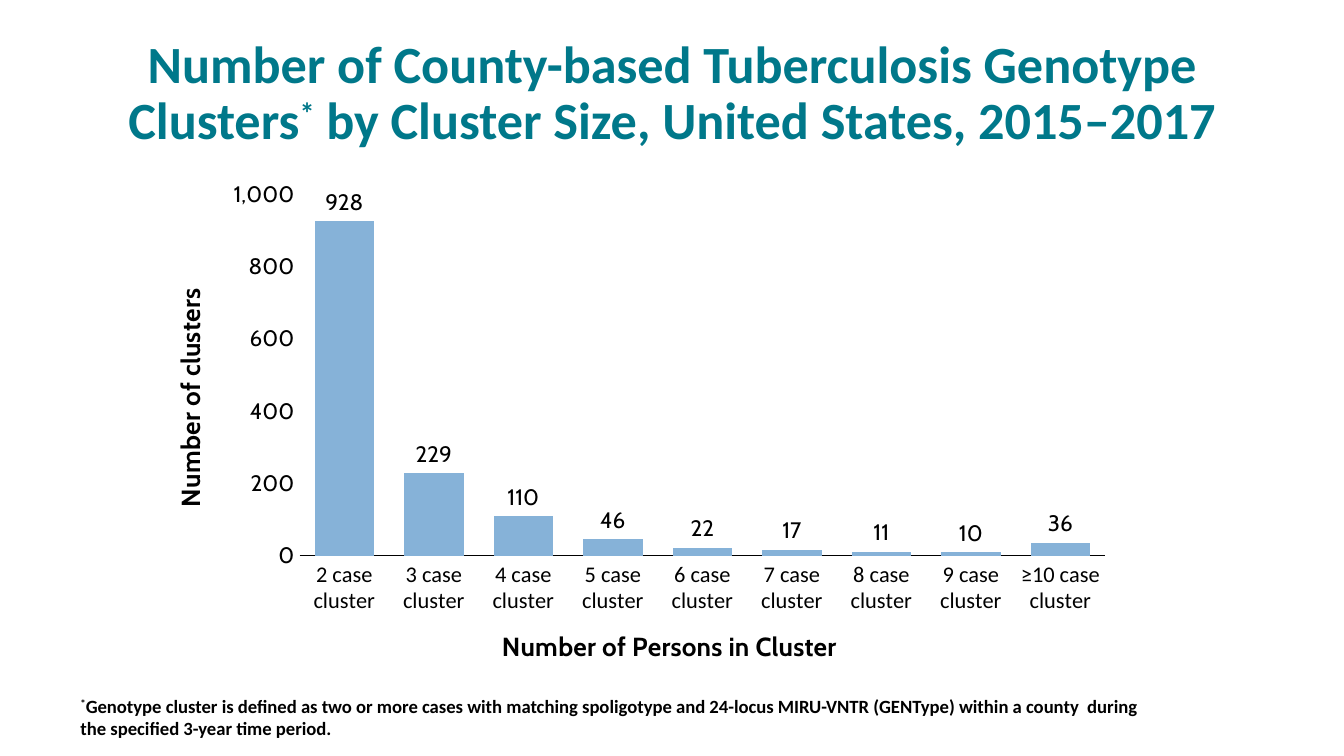
from lxml import etree
from pptx import Presentation
from pptx.chart.data import CategoryChartData
from pptx.dml.color import RGBColor
from pptx.enum.chart import XL_CHART_TYPE, XL_LABEL_POSITION, XL_TICK_MARK
from pptx.enum.text import MSO_ANCHOR, MSO_AUTO_SIZE, PP_ALIGN
from pptx.oxml.ns import qn
from pptx.util import Inches, Pt

COLUMNS = XL_CHART_TYPE.COLUMN_CLUSTERED
OUTSIDE_END = XL_LABEL_POSITION.OUTSIDE_END
NO_TICK = XL_TICK_MARK.NONE
TITLE_ONLY = 5

COLORS = {"title": "00788A", "text": "000000", "bar": "86B2D8"}
BODY_FONT, CHART_FONT = "Calibri", "Cabin"

CLUSTERS = {
    "2 case cluster": 928,
    "3 case cluster": 229,
    "4 case cluster": 110,
    "5 case cluster": 46,
    "6 case cluster": 22,
    "7 case cluster": 17,
    "8 case cluster": 11,
    "9 case cluster": 10,
    "≥10 case cluster": 36,
}


def format_font(font, size=12, name=BODY_FONT, color="text", bold=False):
    font.size = Pt(size)
    font.name = name
    font.bold = bold
    font.color.rgb = RGBColor.from_string(COLORS[color])


def add_span(para, text, raised=False, **style):
    span = para.add_run()
    span.text = text
    format_font(span.font, **style)
    if raised:
        span._r.get_or_add_rPr().set("baseline", "30000")


def set_layout(parent, index, inner=False, **percents):
    """Place a chart part at percentages (x, y, w, h) of the chart's size."""
    for old in parent.findall(qn("c:layout")):
        parent.remove(old)
    layout = etree.Element(qn("c:layout"))
    manual = etree.SubElement(layout, qn("c:manualLayout"))
    settings = [("layoutTarget", "inner")] if inner else []
    settings += [(f"{side}Mode", "edge") for side in ("x", "y")]
    settings += [(side, str(percent / 100)) for side, percent in percents.items()]
    for tag, value in settings:
        etree.SubElement(manual, qn(f"c:{tag}")).set("val", value)
    parent.insert(index, layout)


class SlideBuilder:
    def __init__(self, width, height):
        self.deck = Presentation()
        self.deck.slide_width = Inches(width)
        self.deck.slide_height = Inches(height)
        self.page = self.deck.slides.add_slide(self.deck.slide_layouts[TITLE_ONLY])

    def area(self, left, top, width, height):
        """Turn percentages of the slide into lengths."""
        across, down = self.deck.slide_width / 100, self.deck.slide_height / 100
        return (int(left * across), int(top * down),
                int(width * across), int(height * down))

    def fill_text(self, box, spans, anchor, align, **style):
        frame = box.text_frame
        frame.word_wrap = True
        frame.auto_size = MSO_AUTO_SIZE.NONE
        frame.vertical_anchor = anchor
        para = frame.paragraphs[0]
        para.alignment = align
        for text, raised in spans:
            add_span(para, text, raised, bold=True, **style)
        return para

    def title(self, area, spans):
        box = self.page.shapes.title
        box.left, box.top, box.width, box.height = self.area(*area)
        para = self.fill_text(box, spans, MSO_ANCHOR.BOTTOM, PP_ALIGN.CENTER,
                              size=28, color="title")
        para.line_spacing = Pt(30)

    def footnote(self, area, spans):
        box = self.page.shapes.add_textbox(*self.area(*area))
        self.fill_text(box, spans, MSO_ANCHOR.MIDDLE, PP_ALIGN.LEFT, size=10)

    def axis(self, axis, title, x, y, font_name, rotation=0):
        axis.major_tick_mark = axis.minor_tick_mark = NO_TICK
        axis.has_major_gridlines = False
        format_font(axis.tick_labels.font, name=font_name)
        frame = axis.axis_title.text_frame
        add_span(frame.paragraphs[0], title, size=14, name=CHART_FONT, bold=True)
        body = frame._txBody.find(qn("a:bodyPr"))
        body.set("rot", str(rotation * 60000))
        body.set("vert", "horz")
        set_layout(axis.axis_title._element, 1, x=x, y=y)

    def column_chart(self, area, values):
        data = CategoryChartData(number_format="#,##0")
        data.categories = list(values)
        data.add_series("Series 1", list(values.values()))
        chart = self.page.shapes.add_chart(COLUMNS, *self.area(*area), data).chart
        chart.has_legend = chart.has_title = False
        format_font(chart.font)
        set_layout(chart._chartSpace.chart.plotArea, 0, inner=True,
                   x=16, y=4.6, w=82, h=69)

        # Axes
        self.axis(chart.category_axis, "Number of Persons in Cluster",
                  36.1, 86.6, BODY_FONT)
        line = chart.category_axis.format.line
        line.width = Pt(0.75)
        line.color.rgb = RGBColor.from_string(COLORS["text"])
        scale = chart.value_axis
        self.axis(scale, "Number of clusters", 2.5, 21.6, CHART_FONT, rotation=-90)
        scale.format.line.fill.background()
        scale.minimum_scale, scale.maximum_scale, scale.major_unit = 0, 1000, 200

        # Bars and their values
        plot = chart.plots[0]
        plot.gap_width, plot.overlap, plot.vary_by_categories = 50, -27, False
        bars = plot.series[0]
        bars.format.fill.solid()
        bars.format.fill.fore_color.rgb = RGBColor.from_string(COLORS["bar"])
        labels = bars.data_labels
        labels.show_value = True
        labels.position = OUTSIDE_END
        format_font(labels.font, name=CHART_FONT)


def main():
    slide = SlideBuilder(10, 10 * 9 / 16)

    # Heading
    slide.title((5, 4.1, 90, 16.67), [
        ("Number of County-based Tuberculosis Genotype Clusters", False),
        ("*", True),
        (" by Cluster Size, United States, 2015–2017", False),
    ])

    # Cluster counts
    slide.column_chart((10.6, 22.6, 73.1, 69.2), CLUSTERS)

    # Definition
    slide.footnote((5, 89.7, 81.5, 10.3), [
        ("*", True),
        ("Genotype cluster is defined as two or more cases with matching "
         "spoligotype and 24-locus MIRU-VNTR (GENType) within a county  during "
         "the specified 3-year time period.", False),
    ])

    slide.deck.save("out.pptx")


if __name__ == "__main__":
    main()
